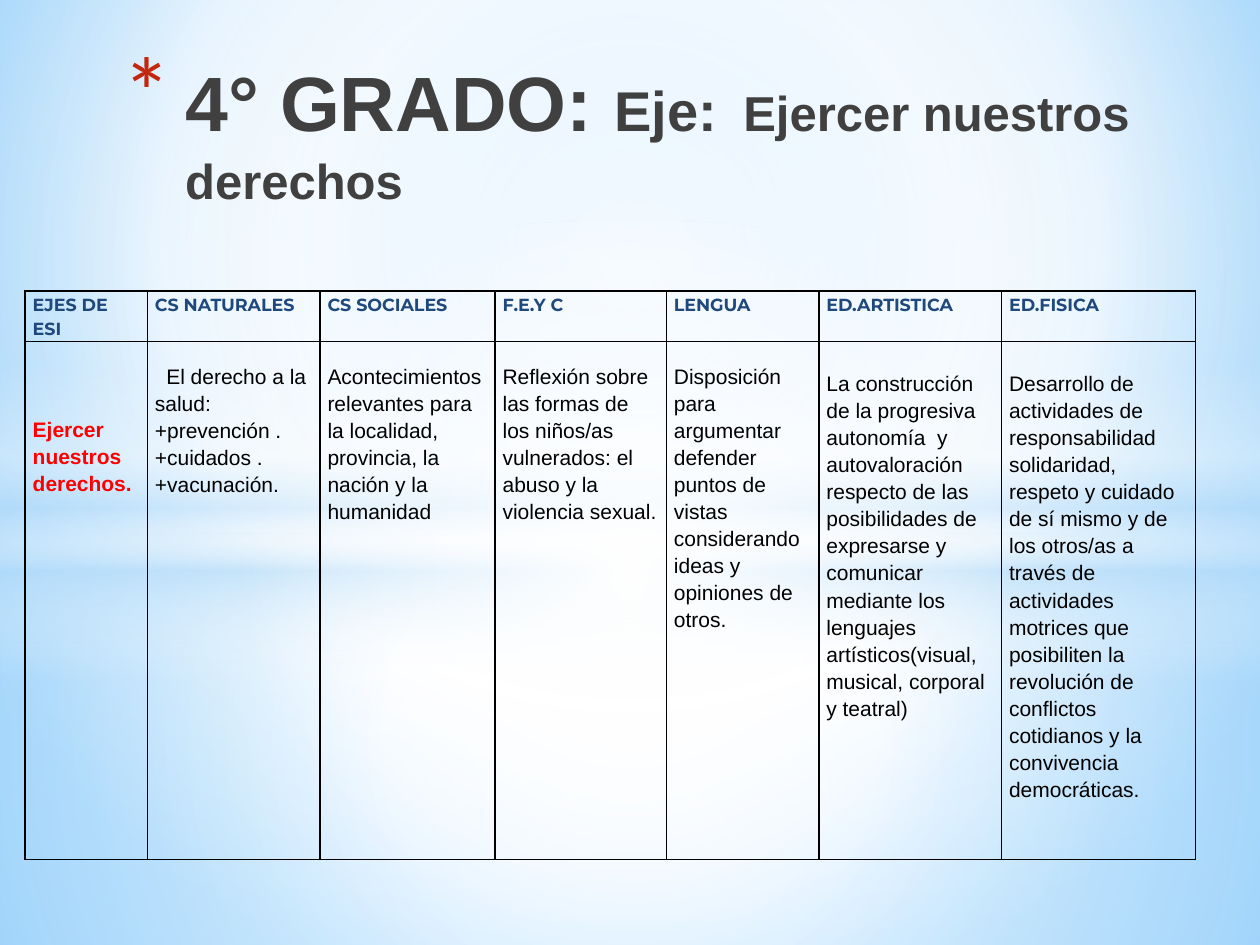
"""Build the fourth-grade slide on exercising our rights, with its table of subjects."""
from lxml.etree import SubElement
from pptx import Presentation
from pptx.dml.color import RGBColor
from pptx.enum.shapes import MSO_SHAPE
from pptx.enum.text import MSO_ANCHOR, PP_ALIGN
from pptx.oxml import parse_xml
from pptx.oxml.ns import nsdecls, qn
from pptx.util import Inches, Pt

THEME = {
    "font": "Arial", "header_font": "Montserrat", "bullet_font": "Calibri",
    "title": "404040", "bullet": "C3260C", "header": "1F497D",
    "axis": "FF0000", "body": "000000", "border": "000000",
    "header_size": 10, "body_size": 12, "line_spacing": 1.15,
}
TITLE = [("4° GRADO: ", 44), ("Eje:", 32), (" ", 54), ("Ejercer nuestros derechos", 28)]
TITLE_BOX = (0.67, 0.29, 8.5, 1.42)

BACKGROUND = ([(0, "9ED5FF", 100), (60, "FFFFFF", 100), (100, "5BB9FF", 100)], (20, 10, 20, 60))
CENTRE = (50, 50, 50, 50)
GLOWS = [
    (MSO_SHAPE.RECTANGLE, (0, 4.23, 10, 3.27),
     [(0, "FFFFFF", 91), (37, "FFFFFF", 76), (100, "B4DCFA", 79)], CENTRE),
    (MSO_SHAPE.RECTANGLE, (0, 0, 10, 4.23),
     [(0, "FFFFFF", 89), (48, "FFFFFF", 62), (100, "B4DCFA", 79)], CENTRE),
    (MSO_SHAPE.RECTANGLE, (0, 2.9, 10, 2.5),
     [(0, "FFFFFF", 0), (29, "FFFFFF", 30), (45, "B4DCFA", 40),
      (55, "FFFFFF", 26), (65, "B4DCFA", 60), (100, "FFFFFF", 0)], None),
    (MSO_SHAPE.OVAL, (0, 1.75, 10, 5.58),
     [(0, "FFFFFF", 100), (54, "FFFFFF", 0)], CENTRE),
]

TABLE_BOX = (0.2, 2.31, 9.29, 4.51)
ROW_HEIGHTS = (0.4, 4.11)
COLUMNS = [
    ("EJES DE ESI", 0.97, 0.58, ["Ejercer nuestros derechos."]),
    ("CS NATURALES", 1.37, 0.16,
     ["El derecho a la salud: +prevención .", "+cuidados .", "+vacunación."]),
    ("CS SOCIALES", 1.39, 0.16,
     ["Acontecimientos relevantes para la localidad, provincia, la nación y la humanidad"]),
    ("F.E.Y C", 1.36, 0.16,
     ["Reflexión sobre las formas de los niños/as vulnerados: el abuso y la violencia sexual."]),
    ("LENGUA", 1.21, 0.16,
     ["Disposición para argumentar defender  puntos de vistas considerando ideas y "
      "opiniones de otros."]),
    ("ED.ARTISTICA", 1.45, 0.22,
     ["La construcción de la progresiva autonomía  y autovaloración respecto de las "
      "posibilidades de expresarse y comunicar mediante los lenguajes "
      "artísticos(visual, musical, corporal y teatral)"]),
    ("ED.FISICA", 1.54, 0.22,
     ["Desarrollo de actividades de responsabilidad solidaridad, respeto y cuidado de sí "
      "mismo y de los otros/as a través de actividades motrices que posibiliten la "
      "revolución de conflictos cotidianos y la convivencia democráticas."]),
]


def inches(values):
    return [Inches(value) for value in values]


def set_gradient(fill, parent, stops, focus):
    fill.solid()
    stop_xml = "".join(
        f'<a:gs pos="{place * 1000}"><a:srgbClr val="{color}">'
        f'<a:alpha val="{alpha * 1000}"/></a:srgbClr></a:gs>'
        for place, color, alpha in stops)
    if focus:
        sides = " ".join(f'{side}="{value * 1000}"' for side, value in zip("ltrb", focus))
        direction = f'<a:path path="circle"><a:fillToRect {sides}/></a:path>'
    else:
        direction = '<a:lin ang="5400000" scaled="0"/>'
    gradient = parse_xml(f'<a:gradFill {nsdecls("a")} rotWithShape="1">'
                         f'<a:gsLst>{stop_xml}</a:gsLst>{direction}</a:gradFill>')
    solid = next(parent.iter(qn("a:solidFill")))
    solid.getparent().replace(solid, gradient)


def style_run(span, font, size, color, bold):
    span.font.name = font
    span.font.size = Pt(size)
    span.font.bold = bold
    span.font.color.rgb = RGBColor.from_string(color)


def add_backdrop(page):
    set_gradient(page.background.fill, page.element, *BACKGROUND)
    for kind, place, stops, focus in GLOWS:
        glow = page.shapes.add_shape(kind, *inches(place))
        glow.shadow.inherit = False
        glow.line.fill.background()
        set_gradient(glow.fill, glow.element.spPr, stops, focus)


def format_title(page):
    title = page.shapes.title
    page.shapes.element.append(title.element)
    title.left, title.top, title.width, title.height = inches(TITLE_BOX)
    frame = title.text_frame
    frame.word_wrap = True
    frame.vertical_anchor = MSO_ANCHOR.BOTTOM
    para = frame.paragraphs[0]
    para.alignment = PP_ALIGN.LEFT
    for text, size in TITLE:
        span = para.add_run()
        span.text = text
        style_run(span, THEME["font"], size, THEME["title"], True)
    settings = para._p.get_or_add_pPr()
    settings.set("marL", str(Inches(0.7)))
    settings.set("indent", str(Inches(-0.5)))
    bullet_color = SubElement(settings, qn("a:buClr"))
    SubElement(bullet_color, qn("a:srgbClr"), val=THEME["bullet"])
    SubElement(settings, qn("a:buSzPct"), val="128000")
    SubElement(settings, qn("a:buFont"), typeface=THEME["bullet_font"])
    SubElement(settings, qn("a:buChar"), char="*")


def fill_cell(cell, lines, top, font, size, color, bold):
    cell.margin_left = cell.margin_right = Inches(0.06)
    cell.margin_top, cell.margin_bottom = Inches(top), 0
    cell.vertical_anchor = MSO_ANCHOR.TOP
    cell.fill.background()
    properties = cell._tc.get_or_add_tcPr()
    for index, side in enumerate(("lnL", "lnR", "lnT", "lnB")):
        properties.insert(index, parse_xml(
            f'<a:{side} {nsdecls("a")} w="{Pt(1)}"><a:solidFill>'
            f'<a:srgbClr val="{THEME["border"]}"/></a:solidFill></a:{side}>'))
    cell.text_frame.text = "\n".join(lines)
    for para in cell.text_frame.paragraphs:
        para.line_spacing = THEME["line_spacing"]
        for span in para.runs:
            style_run(span, font, size, color, bold)


def add_subject_table(page):
    table = page.shapes.add_table(2, len(COLUMNS), *inches(TABLE_BOX)).table
    table.first_row = table.horz_banding = False
    for row, height in zip(table.rows, ROW_HEIGHTS):
        row.height = Inches(height)
    for index, (heading, width, top, lines) in enumerate(COLUMNS):
        table.columns[index].width = Inches(width)
        fill_cell(table.cell(0, index), [heading], 0, THEME["header_font"],
                  THEME["header_size"], THEME["header"], True)
        is_axis = index == 0
        fill_cell(table.cell(1, index), lines, top, THEME["font"], THEME["body_size"],
                  THEME["axis"] if is_axis else THEME["body"], is_axis)
    health = table.cell(1, 1).text_frame.paragraphs[0]
    health._p.get_or_add_pPr().set("indent", str(Inches(0.09)))


def main():
    deck = Presentation()
    deck.slide_width, deck.slide_height = Inches(10), Inches(7.5)
    page = deck.slides.add_slide(deck.slide_layouts[5])
    add_backdrop(page)
    format_title(page)
    add_subject_table(page)
    deck.save("out.pptx")


if __name__ == "__main__":
    main()
